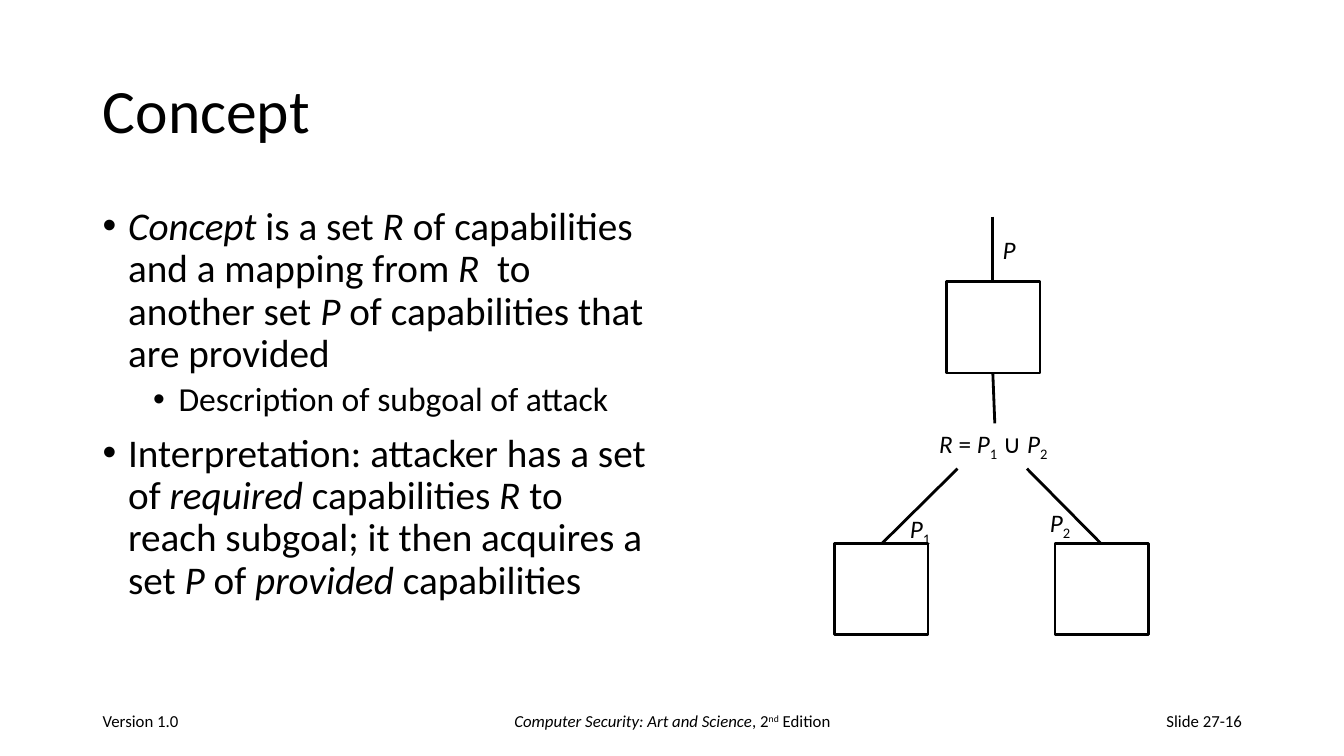
"""Build the Concept slide with its capability tree."""
import pptx
import pptx.dml.color
import pptx.enum.shapes
import pptx.enum.text
import pptx.oxml.ns
import pptx.util
from lxml import etree

Cm, Pt = pptx.util.Cm, pptx.util.Pt
Align = pptx.enum.text.PP_ALIGN
Anchor = pptx.enum.text.MSO_ANCHOR
qn = pptx.oxml.ns.qn
COLORS = {"ink": "000000"}
INK = pptx.dml.color.RGBColor.from_string(COLORS["ink"])

deck = pptx.Presentation()
deck.slide_width, deck.slide_height = Cm(33.87), Cm(19.05)
slide = deck.slides.add_slide(deck.slide_layouts[6])
shapes = slide.shapes


def put(text, x, y, w, h=1.02, size=18, align=Align.LEFT, anchor=Anchor.TOP,
        wrap=True, space=None, levels=(), shift=-25):
    """Add a text box; *stars* mark italics and _bars_ mark shifted text."""
    frame = shapes.add_textbox(Cm(x), Cm(y), Cm(w), Cm(h)).text_frame
    frame.word_wrap, frame.vertical_anchor = wrap, anchor
    for row, line in enumerate(text.split("\n")):
        para = frame.paragraphs[0] if row == 0 else frame.add_paragraph()
        para.alignment, para.line_spacing = align, space
        points = size
        if levels:
            level = levels[row]
            points = size - 4 * level
            para.level = level
            para.space_before = Pt(10 - 5 * level if row else 0)
            props = para._p.get_or_add_pPr()
            props.set("marL", str(Cm(0.64 + 1.27 * level)))
            props.set("indent", str(-Cm(0.64)))
            etree.SubElement(props, qn("a:buFont")).set("typeface", "Arial")
            etree.SubElement(props, qn("a:buChar")).set("char", "•")
        for i, part in enumerate(line.split("*")):
            for j, piece in enumerate(part.split("_")):
                if not piece:
                    continue
                run = para.add_run()
                run.text = piece
                run.font.name, run.font.size = "Calibri", Pt(points)
                run.font.italic = i % 2 == 1
                run.font.color.rgb = INK
                if j % 2:
                    run._r.get_or_add_rPr().set("baseline", str(shift * 1000))


put("Concept", 2.34, 1.02, 29.21, 3.68, size=44, anchor=Anchor.MIDDLE, space=0.9)
put("*Concept* is a set *R* of capabilities and a mapping from *R * to another "
    "set *P* of capabilities that are provided\n"
    "Description of subgoal of attack\n"
    "Interpretation: attacker has a set of *required* capabilities *R* to reach "
    "subgoal; it then acquires a set *P* of *provided* capabilities",
    2.34, 5.08, 14.4, 12.09, size=28, space=0.9, levels=(0, 1, 0))

for text, x, w, align in (
    ("Version 1.0", 2.34, 7.62, Align.LEFT),
    ("*Computer Security: Art and Science*, 2_nd_ Edition", 11.23, 11.43, Align.CENTER),
    ("Slide 27-16", 23.93, 7.62, Align.RIGHT),
):
    put(text, x, 17.65, w, size=12, align=align, anchor=Anchor.MIDDLE, shift=30)

for x, y in ((23.85, 7.09), (21.03, 13.69), (26.59, 13.69)):
    node = shapes.add_shape(pptx.enum.shapes.MSO_SHAPE.RECTANGLE,
                            Cm(x), Cm(y), Cm(2.36), Cm(2.31))
    node.shadow.inherit = False
    node.fill.background()
    node.line.color.rgb, node.line.width = INK, Pt(2)

for ends in (
    (25.88, 11.81, 27.74, 13.69),
    (24.13, 11.81, 22.23, 13.69),
    (25.02, 5.46, 25.02, 7.14),
    (25.02, 9.4, 25.07, 10.67),
):
    edge = shapes.add_connector(pptx.enum.shapes.MSO_CONNECTOR.STRAIGHT,
                                *(Cm(end) for end in ends))
    edge.line.color.rgb, edge.line.width = INK, Pt(2)
    etree.SubElement(edge._element.spPr, qn("a:effectLst"))

for text, x, y, w in (
    ("*R* = *P*_1_ ∪ *P*_2_", 23.42, 10.67, 3.3),
    ("*P*", 25.02, 5.79, 0.84),
    ("*P*_1_", 22.68, 12.8, 1.07),
    ("*P*_2_", 26.21, 12.65, 1.07),
):
    put(text, x, y, w, wrap=False)

deck.save("out.pptx")
